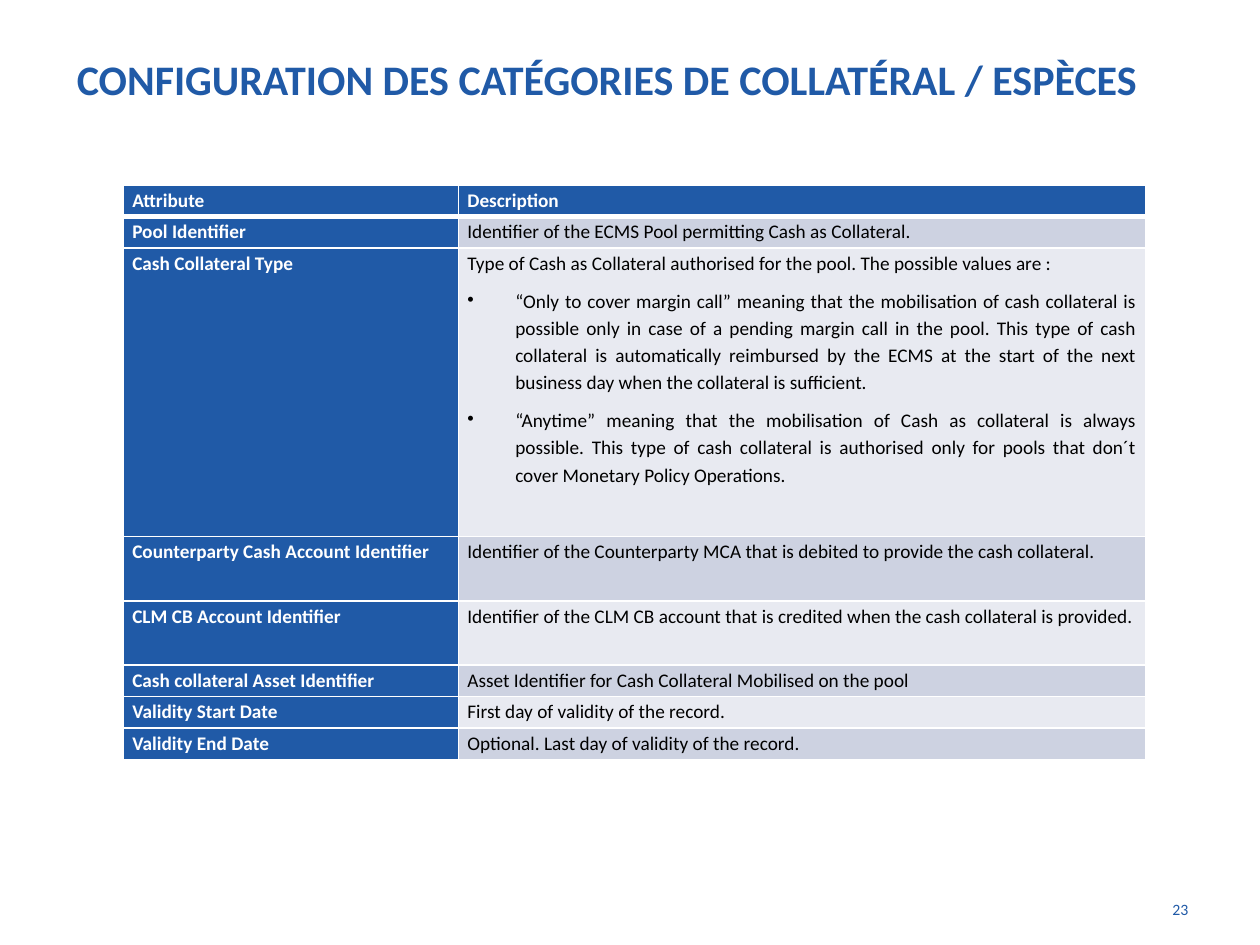
from pptx import Presentation
from pptx.dml.color import RGBColor
from pptx.enum import text
from pptx.oxml import parse_xml
from pptx.oxml.ns import nsdecls
from pptx.util import Inches, Pt

BLUE, WHITE, BLACK = "205AA7", "FFFFFF", "000000"
BANDS = ["CDD2E1", "E8EAF1"]
LEFT, RIGHT, JUSTIFY = text.PP_ALIGN.LEFT, text.PP_ALIGN.RIGHT, text.PP_ALIGN.JUSTIFY


def rgb(value):
    return RGBColor.from_string(value)


def write(p, words, size=11, color=BLACK, bold=False, align=LEFT):
    p.alignment = align
    r = p.add_run()
    r.text = words
    r.font.name, r.font.size, r.font.bold = "Calibri", Pt(size), bold
    r.font.color.rgb = rgb(color)


prs = Presentation()
prs.slide_width, prs.slide_height = Inches(10), Inches(7.5)
s = prs.slides.add_slide(prs.slide_layouts[5])

# Title
sp = s.shapes.title
sp.left, sp.top, sp.width, sp.height = Inches(0.51), Inches(0), Inches(9), Inches(1.25)
tf = sp.text_frame
tf.auto_size = text.MSO_AUTO_SIZE.NONE
tf.vertical_anchor = text.MSO_ANCHOR.MIDDLE
write(tf.paragraphs[0], "CONFIGURATION DES CATÉGORIES DE COLLATÉRAL / ESPÈCES",
      size=24, color=BLUE, bold=True)

# Attribute table: each row is height, attribute, description paragraphs
rows = [
    (0.25, "Attribute", ["Description"]),
    (0.25, "Pool Identifier",
     ["Identifier of the ECMS Pool permitting Cash as Collateral."]),
    (2.29, "Cash Collateral Type",
     ["Type of Cash as Collateral authorised for the pool. The possible values are :",
      "“Only to cover margin call” meaning that the mobilisation of cash collateral is "
      "possible only in case of a pending margin call in the pool. This type of cash "
      "collateral is automatically reimbursed by the ECMS at the start of the next "
      "business day when the collateral is sufficient.",
      "“Anytime” meaning that the mobilisation of Cash as collateral is always possible. "
      "This type of cash collateral is authorised only for pools that don´t cover "
      "Monetary Policy Operations."]),
    (0.51, "Counterparty Cash Account Identifier",
     ["Identifier of the Counterparty MCA that is debited to provide the cash collateral."]),
    (0.51, "CLM CB Account Identifier",
     ["Identifier of the CLM CB account that is credited when the cash collateral is provided."]),
    (0.25, "Cash collateral Asset Identifier",
     ["Asset Identifier for Cash Collateral Mobilised on the pool"]),
    (0.25, "Validity Start Date", ["First day of validity of the record."]),
    (0.25, "Validity End Date", ["Optional. Last day of validity of the record."]),
]
table = s.shapes.add_table(len(rows), 2, Inches(0.98), Inches(1.47),
                           Inches(8.11), Inches(4.56)).table
for column, width in zip(table.columns, (2.66, 5.45)):
    column.width = Inches(width)

for i, (height, attribute, description) in enumerate(rows):
    table.rows[i].height = Inches(height)
    for j, paragraphs in enumerate(([attribute], description)):
        cell = table.cell(i, j)
        cell.margin_left = cell.margin_right = Inches(0.07)
        cell.margin_top = cell.margin_bottom = 0

        # White borders, thicker below the header
        for side in ("L", "R", "T", "B"):
            thick = (i, side) in ((0, "B"), (1, "T"))
            cell._tc.get_or_add_tcPr().append(parse_xml(
                f'<a:ln{side} {nsdecls("a")} w="{Pt(3 if thick else 1)}"><a:solidFill>'
                f'<a:srgbClr val="{WHITE}"/></a:solidFill></a:ln{side}>'))
        heading = i == 0 or j == 0
        cell.fill.solid()
        cell.fill.fore_color.rgb = rgb(BLUE if heading else BANDS[(i - 1) % 2])

        # Cell text, with bullets after the first paragraph
        for k, words in enumerate(paragraphs):
            p = cell.text_frame.add_paragraph() if k else cell.text_frame.paragraphs[0]
            if k:
                pPr = p._p.get_or_add_pPr()
                pPr.set("marL", str(Inches(0.38)))
                pPr.set("indent", str(-Inches(0.38)))
                pPr.append(parse_xml(f'<a:buChar {nsdecls("a")} char="•"/>'))
                p.space_before = Pt(3)
            p.space_after = Pt(3)
            p.line_spacing = 1.15
            write(p, words, color=WHITE if heading else BLACK, bold=heading,
                  align=LEFT if heading else JUSTIFY)

# Slide number
sp = s.shapes.add_textbox(Inches(8.94), Inches(7.09), Inches(0.59), Inches(0.39))
sp.text_frame.word_wrap = True
write(sp.text_frame.paragraphs[0], "23", size=9, color=BLUE, align=RIGHT)

prs.save("out.pptx")
